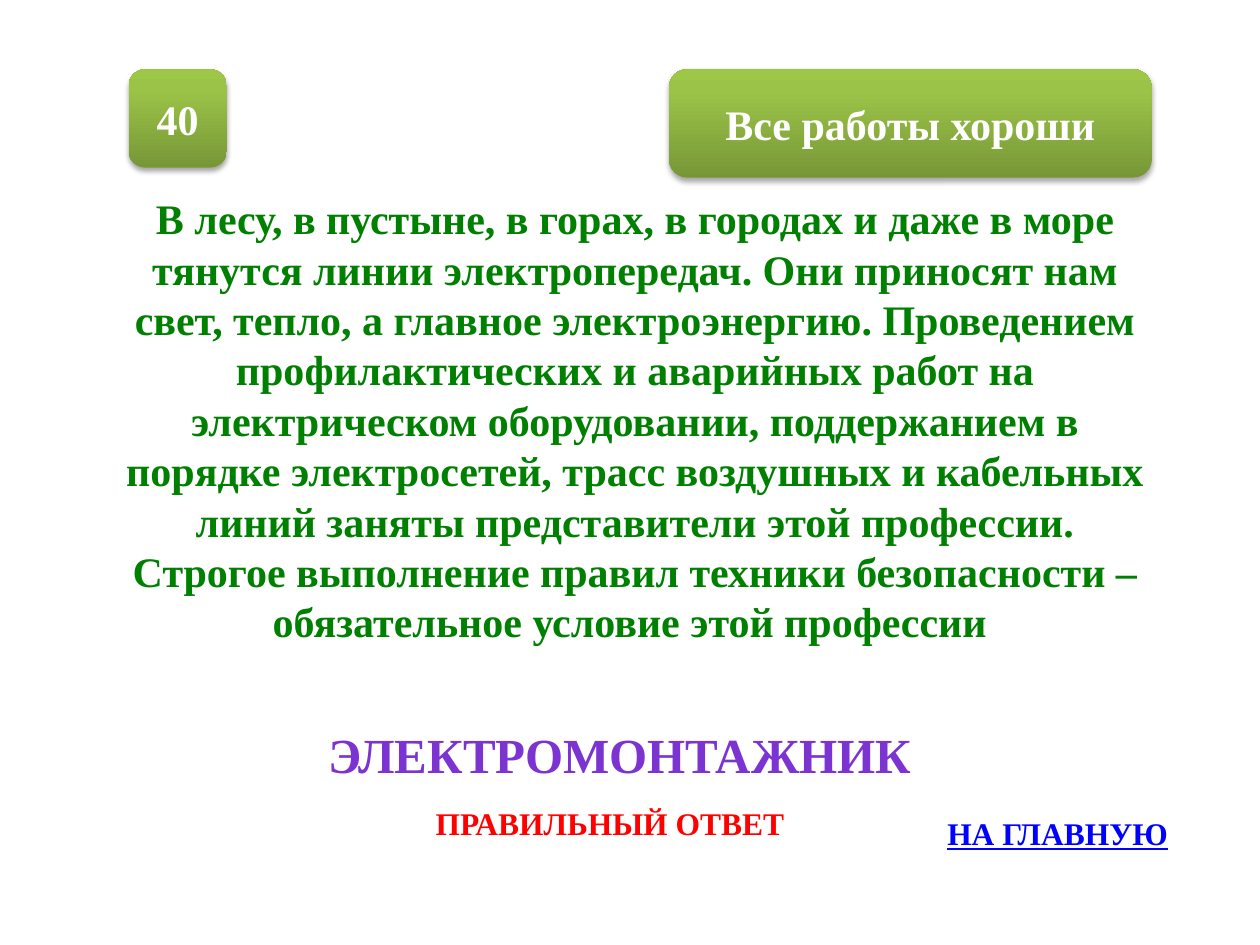
from lxml import etree
from pptx import Presentation
from pptx.dml.color import RGBColor
from pptx.enum import shapes, text
from pptx.oxml import ns
from pptx.util import Inches, Pt

FONT = "Times New Roman"
WHITE = RGBColor(0xFF, 0xFF, 0xFF)
GREEN = RGBColor(0x00, 0x80, 0x00)
VIOLET = RGBColor(0x7B, 0x34, 0xD2)
RED = RGBColor(0xFF, 0x00, 0x00)
BLUE = RGBColor(0x00, 0x00, 0xFF)
BLACK = RGBColor(0x00, 0x00, 0x00)
STOPS = [
    (0, RGBColor(0x77, 0x97, 0x37)),
    (80, RGBColor(0x9B, 0xC3, 0x48)),
    (100, RGBColor(0x9D, 0xC7, 0x46)),
]
MID = text.PP_ALIGN.CENTER
LEFT = text.PP_ALIGN.LEFT

QUERY = (
    "В лесу, в пустыне, в горах, в городах и даже в море тянутся линии "
    "электропередач. Они приносят нам свет, тепло, а главное электроэнергию. "
    "Проведением профилактических и аварийных работ на электрическом "
    "оборудовании, поддержанием в порядке электросетей, трасс воздушных и "
    "кабельных линий заняты представители этой профессии. Строгое выполнение "
    "правил техники безопасности – обязательное условие этой профессии "
)


def node(parent, tag, **attrs):
    """Add a drawing element with its attributes."""
    return etree.SubElement(parent, ns.qn(tag), {k: str(v) for k, v in attrs.items()})


def write(frame, words, size, color, align=MID, line=False):
    """Put one bold run into the first paragraph of a frame."""
    para = frame.paragraphs[0]
    para.alignment = align
    run = para.add_run()
    run.text = words
    font = run.font
    font.name, font.size, font.bold = FONT, Pt(size), True
    font.color.rgb = color
    if line:
        font.underline = True


def label(slide, box, words, size, color, align=MID, wrap=True, line=False):
    """Place a text box that grows with its text."""
    frame = slide.shapes.add_textbox(*map(Inches, box)).text_frame
    frame.word_wrap = wrap
    frame.auto_size = text.MSO_AUTO_SIZE.SHAPE_TO_FIT_TEXT
    write(frame, words, size, color, align, line)


def shade(shape):
    """Give a shape the green gradient and a soft shadow below."""
    shape.line.fill.background()
    shape.fill.gradient()
    shape.fill.gradient_angle = 90
    props = shape.element.spPr
    stops = props.find(ns.qn("a:gradFill")).find(ns.qn("a:gsLst"))
    for old in list(stops):
        stops.remove(old)
    for pos, color in STOPS:
        node(node(stops, "a:gs", pos=pos * 1000), "a:srgbClr", val=color)
    shape.shadow.inherit = False
    glow = node(props.find(ns.qn("a:effectLst")), "a:outerShdw",
                blurRad=Pt(3.1), dist=Pt(1.8), dir=90 * 60000, rotWithShape=0)
    node(node(glow, "a:srgbClr", val=BLACK), "a:alpha", val=35000)


def badge(slide, box, words):
    """Place a rounded green plate with white text."""
    plate = slide.shapes.add_shape(
        shapes.MSO_SHAPE.ROUNDED_RECTANGLE, *map(Inches, box))
    shade(plate)
    plate.text_frame.vertical_anchor = text.MSO_ANCHOR.MIDDLE
    write(plate.text_frame, words, 24, WHITE)


def header(slide, x, y, wide):
    """Place the points at the left and the topic at the right."""
    topic = 3.83
    badge(slide, (x + wide - topic, y, topic, 0.86), "Все работы хороши")
    badge(slide, (x, y, 0.78, 0.78), "40")


def footer(slide, x, y):
    """Place the answer, its caption and the way home."""
    label(slide, (x, y, 5, 0.57), "ЭЛЕКТРОМОНТАЖНИК", 28, VIOLET)
    label(slide, (x + 0.94, y + 0.63, 3.44, 0.4), "ПРАВИЛЬНЫЙ ОТВЕТ", 18, RED, LEFT)
    label(slide, (x + 5, y + 0.71, 1.97, 0.4), "НА ГЛАВНУЮ", 18, BLUE, LEFT,
          wrap=False, line=True)


def main():
    """Build the quiz slide and save it."""
    deck = Presentation()
    deck.slide_width, deck.slide_height = Inches(10), Inches(7.5)
    slide = deck.slides.add_slide(deck.slide_layouts[6])
    header(slide, 1.02, 0.55, 8.12)
    label(slide, (0.86, 1.48, 8.36, 3.74), QUERY, 24, GREEN)
    footer(slide, 2.42, 5.7)
    deck.save("out.pptx")


if __name__ == "__main__":
    main()
